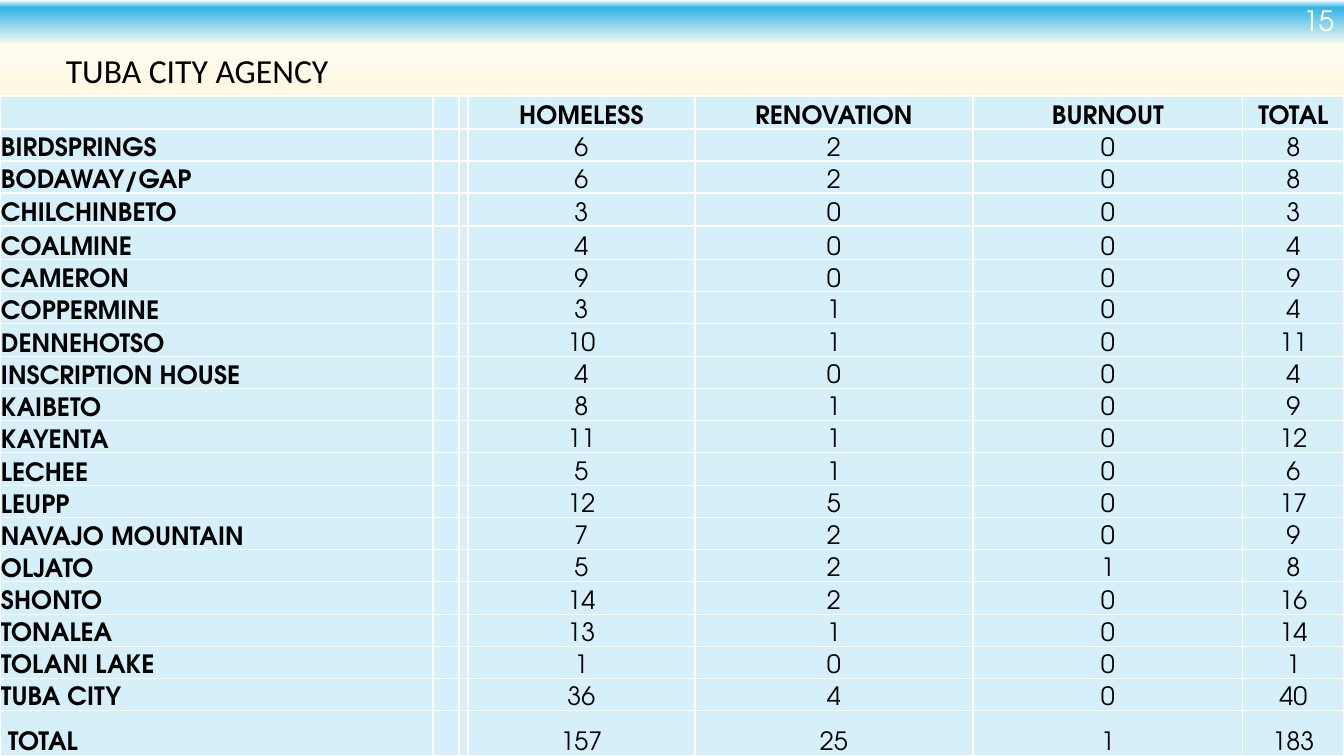
from lxml.etree import SubElement
from pptx import Presentation
from pptx.dml.color import RGBColor
from pptx.enum.text import MSO_ANCHOR, PP_ALIGN
from pptx.oxml.ns import qn
from pptx.util import Pt

PX = 12700 * 5 / 7  # 100.8 px to the inch
BLACK = RGBColor(0x00, 0x00, 0x00)
OFF_WHITE = RGBColor(0xFE, 0xFF, 0xFF)
PALE_BLUE = RGBColor(0xD6, 0xF0, 0xFA)
BORDER = RGBColor(0xFF, 0xFF, 0xFF)
HEADING_FONT = "Calibri"
BODY_FONT = "TeX Gyre Adventor"


def px(length):
    return round(length * PX)


def write(frame, text, size=18, font=BODY_FONT, color=BLACK, bold=False,
          align=PP_ALIGN.LEFT):
    para = frame.paragraphs[0]
    para.alignment = align
    span = para.add_run()
    span.text = text
    span.font.size = Pt(size)
    span.font.name = font
    span.font.color.rgb = color
    span.font.bold = bold


deck = Presentation()
deck.slide_width, deck.slide_height = px(1344), px(756)
page = deck.slides.add_slide(deck.slide_layouts[6])

# Background gradient, top to bottom
backdrop = page.background.fill
backdrop.gradient()
backdrop.gradient_angle = 270
stops = next(page.element.iter(qn("a:gsLst")))
for stop in list(stops):
    stops.remove(stop)
for percent, color in [(0, "FFFFFF"), (1, "31B4E6"), (6, "FFFCF1"), (12, "FFF8E2"),
                       (15, "FFEFBC"), (35, "FFE9A5"), (50, "FFE081"),
                       (65, "FFD65B"), (84, "FFCA29"), (93, "595959")]:
    stop = SubElement(stops, qn("a:gs"), pos=str(percent * 1000))
    SubElement(stop, qn("a:srgbClr"), val=color)

# Table contents: chapter, homeless, renovation, burnout, total
rows = [
    ("", "HOMELESS", "RENOVATION", "BURNOUT", "TOTAL"),
    ("BIRDSPRINGS", 6, 2, 0, 8),
    ("BODAWAY/GAP", 6, 2, 0, 8),
    ("CHILCHINBETO", 3, 0, 0, 3),
    ("COALMINE", 4, 0, 0, 4),
    ("CAMERON", 9, 0, 0, 9),
    ("COPPERMINE", 3, 1, 0, 4),
    ("DENNEHOTSO", 10, 1, 0, 11),
    ("INSCRIPTION HOUSE", 4, 0, 0, 4),
    ("KAIBETO", 8, 1, 0, 9),
    ("KAYENTA", 11, 1, 0, 12),
    ("LECHEE", 5, 1, 0, 6),
    ("LEUPP", 12, 5, 0, 17),
    ("NAVAJO MOUNTAIN", 7, 2, 0, 9),
    ("OLJATO", 5, 2, 1, 8),
    ("SHONTO", 14, 2, 0, 16),
    ("TONALEA", 13, 1, 0, 14),
    ("TOLANI LAKE", 1, 0, 0, 1),
    ("TUBA CITY", 36, 4, 0, 40),
    ("TOTAL", 157, 25, 1, 183),
]
column_widths = [433, 26, 9, 227, 278, 270, 101]
special_heights = {0: 33, 4: 34, 19: 45}
last_row = len(rows) - 1

# Table grid
table = page.shapes.add_table(len(rows), len(column_widths),
                              0, px(96), px(1344), px(660)).table
table.first_row = False
table.horz_banding = False
for column, width in zip(table.columns, column_widths):
    column.width = px(width)
for index, row in enumerate(table.rows):
    row.height = px(special_heights.get(index, 33 if index % 4 == 3 else 32))

# Table cells; two narrow spacer columns follow the chapter names
for r, (chapter, *figures) in enumerate(rows):
    for c, value in enumerate([chapter, "", "", *figures]):
        cell = table.cell(r, c)
        cell.vertical_anchor = MSO_ANCHOR.BOTTOM
        indented = r == last_row and c == 0
        cell.margin_left = px(8 if indented else 1)
        cell.margin_right = cell.margin_top = px(1)
        cell.margin_bottom = 0
        properties = cell._tc.get_or_add_tcPr()
        for side in ("lnL", "lnR", "lnT", "lnB"):
            line = SubElement(properties, qn(f"a:{side}"), w=str(Pt(1)))
            paint = SubElement(line, qn("a:solidFill"))
            SubElement(paint, qn("a:srgbClr"), val=str(BORDER))
        cell.fill.solid()
        cell.fill.fore_color.rgb = PALE_BLUE
        if value == "":
            # Small type keeps an empty cell from stretching its row
            para = cell.text_frame.paragraphs[0]
            SubElement(para._p, qn("a:endParaRPr"), sz="1000")
        else:
            write(cell.text_frame, str(value), bold=r == 0 or c == 0,
                  align=PP_ALIGN.CENTER if c else PP_ALIGN.LEFT)

# Heading
heading = page.shapes.add_textbox(px(56), px(45), px(721), px(50)).text_frame
heading.word_wrap = True
write(heading, "TUBA CITY AGENCY", size=24, font=HEADING_FONT)

# Page number
number = page.shapes.add_textbox(px(1258), 0, px(86), px(40)).text_frame
number.word_wrap = True
number.vertical_anchor = MSO_ANCHOR.MIDDLE
write(number, "15", size=20, color=OFF_WHITE, align=PP_ALIGN.RIGHT)

deck.save("out.pptx")
